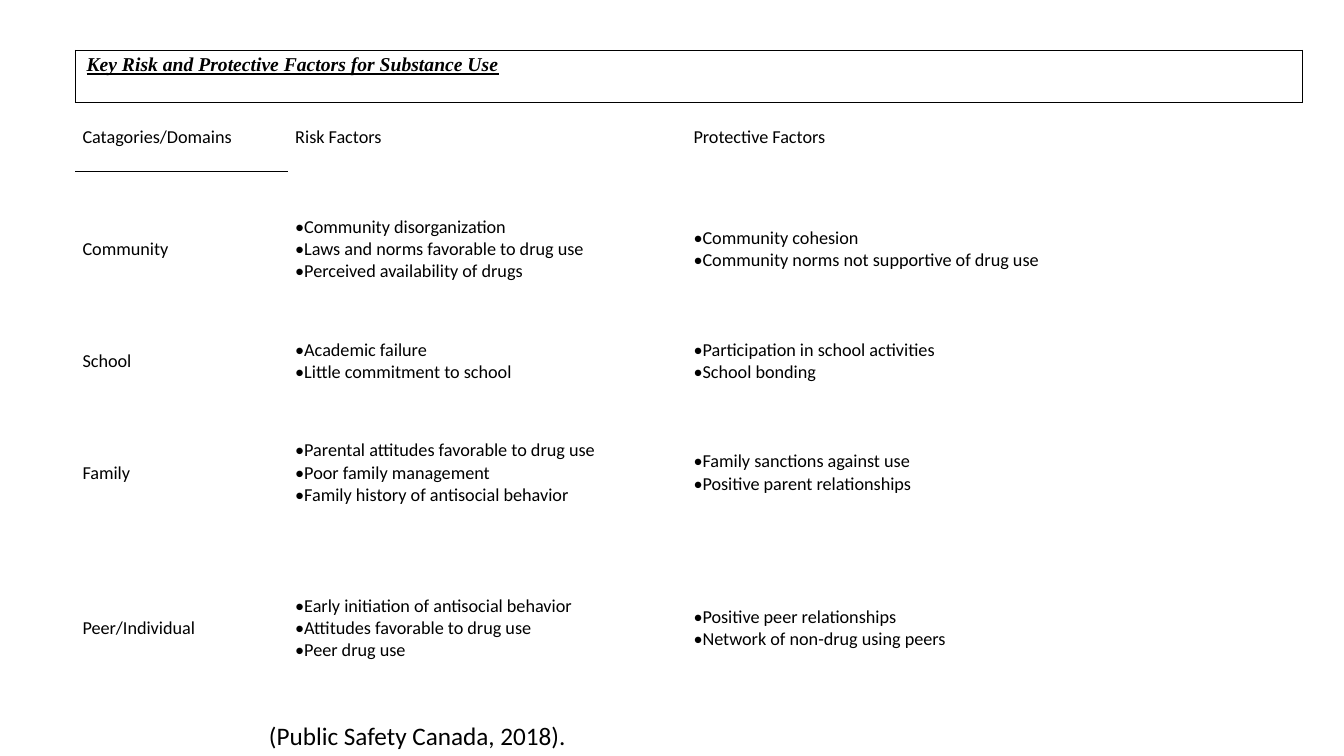
"""Builds a slide with a table of risk and protective factors for substance use."""
from lxml.etree import SubElement
from pptx import Presentation
from pptx.dml.color import RGBColor
from pptx.enum.text import MSO_ANCHOR
from pptx.oxml.ns import qn
from pptx.util import Cm, Pt

TITLE = "Key Risk and Protective Factors for Substance Use"
HEADINGS = ("Catagories/Domains", "Risk Factors", "Protective Factors")
DOMAINS = [
    ("Community",
     ["Community disorganization", "Laws and norms favorable to drug use",
      "Perceived availability of drugs"],
     ["Community cohesion", "Community norms not supportive of drug use"]),
    ("School",
     ["Academic failure", "Little commitment to school"],
     ["Participation in school activities", "School bonding"]),
    ("Family",
     ["Parental attitudes favorable to drug use", "Poor family management",
      "Family history of antisocial behavior"],
     ["Family sanctions against use", "Positive parent relationships"]),
    ("Peer/Individual",
     ["Early initiation of antisocial behavior",
      "Attitudes favorable to drug use", "Peer drug use"],
     ["Positive peer relationships", "Network of non-drug using peers"]),
]
COLUMN_WIDTHS = (5.36, 10.04, 15.53)
SHORT_ROW, TALL_ROW = 1.73, 3.91
ROW_HEIGHTS = (1.32, SHORT_ROW, TALL_ROW, SHORT_ROW, TALL_ROW, TALL_ROW)
NO_STYLE_NO_GRID = "{2D5ABB26-0587-4C30-8999-92F81FD0307C}"


def color(code):
    return RGBColor.from_string(code)


class FactorSlide:
    ink = "000000"
    body_font = "Calibri"
    title_font = "Times New Roman"
    body_size = 13

    def __init__(self, deck):
        self.slide = deck.slides.add_slide(deck.slide_layouts[6])

    def format_run(self, run, size, font):
        run.font.size = Pt(size)
        run.font.name = font
        run.font.color.rgb = color(self.ink)

    def citation(self, wording, left, top, width, height):
        box = self.slide.shapes.add_textbox(Cm(left), Cm(top), Cm(width), Cm(height))
        box.text_frame.word_wrap = True
        box.text_frame.text = wording
        self.format_run(box.text_frame.paragraphs[0].runs[0], 18, self.body_font)

    def table(self, left, top):
        frame = self.slide.shapes.add_table(
            len(ROW_HEIGHTS), len(COLUMN_WIDTHS), Cm(left), Cm(top),
            Cm(sum(COLUMN_WIDTHS)), Cm(sum(ROW_HEIGHTS)))
        factors = frame.table
        factors.first_row = factors.horz_banding = False
        frame.element.find(".//" + qn("a:tableStyleId")).text = NO_STYLE_NO_GRID
        for column, width in zip(factors.columns, COLUMN_WIDTHS):
            column.width = Cm(width)
        for row, height in zip(factors.rows, ROW_HEIGHTS):
            row.height = Cm(height)
        for cell in factors.iter_cells():
            cell.margin_left = cell.margin_right = Cm(0.18)
            cell.margin_top = cell.margin_bottom = Cm(0.1)
            cell.vertical_anchor = MSO_ANCHOR.MIDDLE
            cell.fill.background()
        return factors

    def borders(self, cell, **widths):
        properties = cell._tc.get_or_add_tcPr()
        sides = [side for side in "LRTB" if side in widths]
        for position, side in enumerate(sides):
            line = SubElement(properties, qn(f"a:ln{side}"), w=str(Pt(widths[side])))
            fill = SubElement(line, qn("a:solidFill"))
            SubElement(fill, qn("a:srgbClr"), val=self.ink)
            properties.insert(position, line)

    def title(self, cell, wording):
        cell.vertical_anchor = MSO_ANCHOR.TOP
        paragraph = cell.text_frame.paragraphs[0]
        paragraph.text = " "
        self.format_run(paragraph.runs[0], self.body_size, self.body_font)
        heading = paragraph.add_run()
        heading.text = wording
        self.format_run(heading, 14, self.title_font)
        heading.font.bold = heading.font.italic = heading.font.underline = True

    def entry(self, cell, lines, bulleted=False):
        cell.text_frame.text = "\n".join(lines)
        for paragraph in cell.text_frame.paragraphs:
            self.format_run(paragraph.runs[0], self.body_size, self.body_font)
            if bulleted:
                properties = paragraph._p.get_or_add_pPr()
                properties.set("marL", "0")
                properties.set("indent", "0")
                SubElement(properties, qn("a:buFont"), typeface=self.body_font)
                SubElement(properties, qn("a:buChar"), char="•")


def main():
    deck = Presentation()
    deck.slide_width, deck.slide_height = Cm(33.87), Cm(19.05)
    page = FactorSlide(deck)
    page.citation("(Public Safety Canada, 2018).", 6.53, 18.03, 33.87, 1.02)

    factors = page.table(1.9, 1.27)
    banner = factors.cell(0, 0)
    banner.merge(factors.cell(0, 2))
    page.title(banner, TITLE)
    page.borders(banner, L=0.75, R=0.75, T=0.75)
    page.borders(factors.cell(0, 1), T=0.75)
    page.borders(factors.cell(0, 2), R=0.75, T=0.75)
    page.borders(factors.cell(1, 0), T=1)

    for column, heading in enumerate(HEADINGS):
        page.entry(factors.cell(1, column), [heading])
    for row, (domain, risks, protections) in enumerate(DOMAINS, start=2):
        page.entry(factors.cell(row, 0), [domain])
        page.entry(factors.cell(row, 1), risks, bulleted=True)
        page.entry(factors.cell(row, 2), protections, bulleted=True)
    deck.save("out.pptx")


if __name__ == "__main__":
    main()
